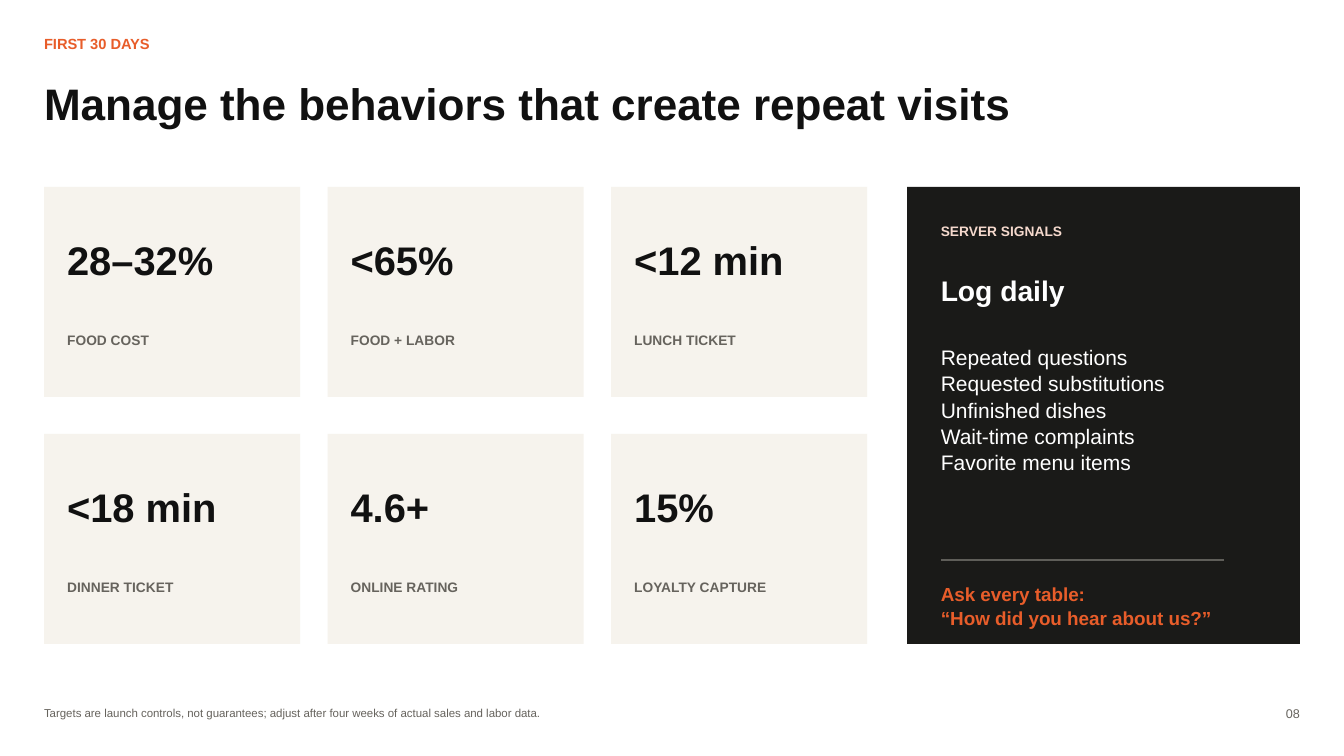
from pptx import Presentation
from pptx.dml.color import RGBColor
from pptx.enum.shapes import MSO_CONNECTOR, MSO_SHAPE
from pptx.enum.text import PP_ALIGN
from pptx.oxml.ns import qn
from pptx.util import Pt
from lxml import etree

RECTANGLE = MSO_SHAPE.RECTANGLE
STRAIGHT = MSO_CONNECTOR.STRAIGHT
LEFT, RIGHT = PP_ALIGN.LEFT, PP_ALIGN.RIGHT

INK, GRAY, ORANGE, WHITE = "111111", "66635D", "E85D2A", "FFFFFF"
CREAM, CHARCOAL, PEACH, RULE = "F6F3ED", "1A1A18", "F5D9CD", "5F5E59"

MARGIN = 31.5
GRID_TOP = 133.5
CARD_WIDTH, CARD_HEIGHT = 183, 150
COLUMN_STEP, ROW_STEP = 202.5, 176.5
CARD_PADDING = 16.5
PANEL_LEFT, PANEL_WIDTH = 648, 280.5
PANEL_TEXT_LEFT = 672

TARGETS = [
    ("28–32%", "FOOD COST"),
    ("<65%", "FOOD + LABOR"),
    ("<12 min", "LUNCH TICKET"),
    ("<18 min", "DINNER TICKET"),
    ("4.6+", "ONLINE RATING"),
    ("15%", "LOYALTY CAPTURE"),
]
SIGNALS = [
    "Repeated questions",
    "Requested substitutions",
    "Unfinished dishes",
    "Wait-time complaints",
    "Favorite menu items",
]


def color(value):
    return RGBColor.from_string(value)


def add_text(page, lines, left, top, width, height, size, fill,
             bold=True, align=LEFT):
    box = page.shapes.add_textbox(Pt(left), Pt(top), Pt(width), Pt(height))
    frame = box.text_frame
    frame.word_wrap = True
    for side in ("left", "top", "right", "bottom"):
        setattr(frame, f"margin_{side}", 0)
    frame.text = "\n".join(lines)
    formats = {"name": "Arial", "size": Pt(size), "bold": bold}
    for para in frame.paragraphs:
        para.alignment = align
        para.line_spacing = 1.05
        for span in para.runs:
            for name, value in formats.items():
                setattr(span.font, name, value)
            span.font.color.rgb = color(fill)


def add_block(page, left, top, width, height, fill):
    block = page.shapes.add_shape(RECTANGLE, Pt(left), Pt(top),
                                  Pt(width), Pt(height))
    block.shadow.inherit = False
    block.fill.solid()
    block.fill.fore_color.rgb = color(fill)
    block.line.fill.background()


def add_rule(page, left, top, width, fill):
    rule = page.shapes.add_connector(STRAIGHT, Pt(left), Pt(top),
                                     Pt(left + width), Pt(top))
    rule.line.width = Pt(0.75)
    rule.line.color.rgb = color(fill)
    etree.SubElement(rule._element.spPr, qn("a:effectLst"))


def add_card(page, left, top, target, label):
    add_block(page, left, top, CARD_WIDTH, CARD_HEIGHT, CREAM)
    text_left = left + CARD_PADDING
    text_width = CARD_WIDTH - 2 * CARD_PADDING
    add_text(page, [target], text_left, top + 33, text_width, 49, 28.5, INK)
    add_text(page, [label], text_left, top + 103, text_width, 18, 9.8, GRAY)


def add_signal_panel(page):
    add_block(page, PANEL_LEFT, GRID_TOP, PANEL_WIDTH,
              ROW_STEP + CARD_HEIGHT, CHARCOAL)
    left = PANEL_TEXT_LEFT
    add_text(page, ["SERVER SIGNALS"], left, 158.5, 202.5, 16.5, 9.8, PEACH)
    add_text(page, ["Log daily"], left, 194, 210, 29, 20.2, WHITE)
    add_text(page, SIGNALS, left, 245, 212, 135, 15, WHITE, bold=False)
    add_rule(page, left, 400, 202.5, RULE)
    add_text(page, ["Ask every table:", "“How did you hear about us?”"],
             left, 415.5, 212, 44.5, 13.5, ORANGE)


def main():
    deck = Presentation()
    deck.slide_width, deck.slide_height = Pt(960), Pt(540)
    page = deck.slides.add_slide(deck.slide_layouts[6])

    # Heading
    add_text(page, ["FIRST 30 DAYS"], MARGIN, 24, 263, 16.5, 10.5, ORANGE)
    add_text(page, ["Manage the behaviors that create repeat visits"],
             MARGIN, 52.5, 840, 54, 31.5, INK)

    # Target cards, three to a row
    for index, (target, label) in enumerate(TARGETS):
        row, column = divmod(index, 3)
        add_card(page, MARGIN + column * COLUMN_STEP,
                 GRID_TOP + row * ROW_STEP, target, label)

    # Daily log
    add_signal_panel(page)

    # Footer
    add_text(page, ["Targets are launch controls, not guarantees; adjust "
                    "after four weeks of actual sales and labor data."],
             MARGIN, 504, 803, 13.5, 8.2, GRAY, bold=False)
    add_text(page, ["08"], 894, 504, 34.5, 13.5, 9, GRAY,
             bold=False, align=RIGHT)

    deck.save("out.pptx")


if __name__ == "__main__":
    main()
